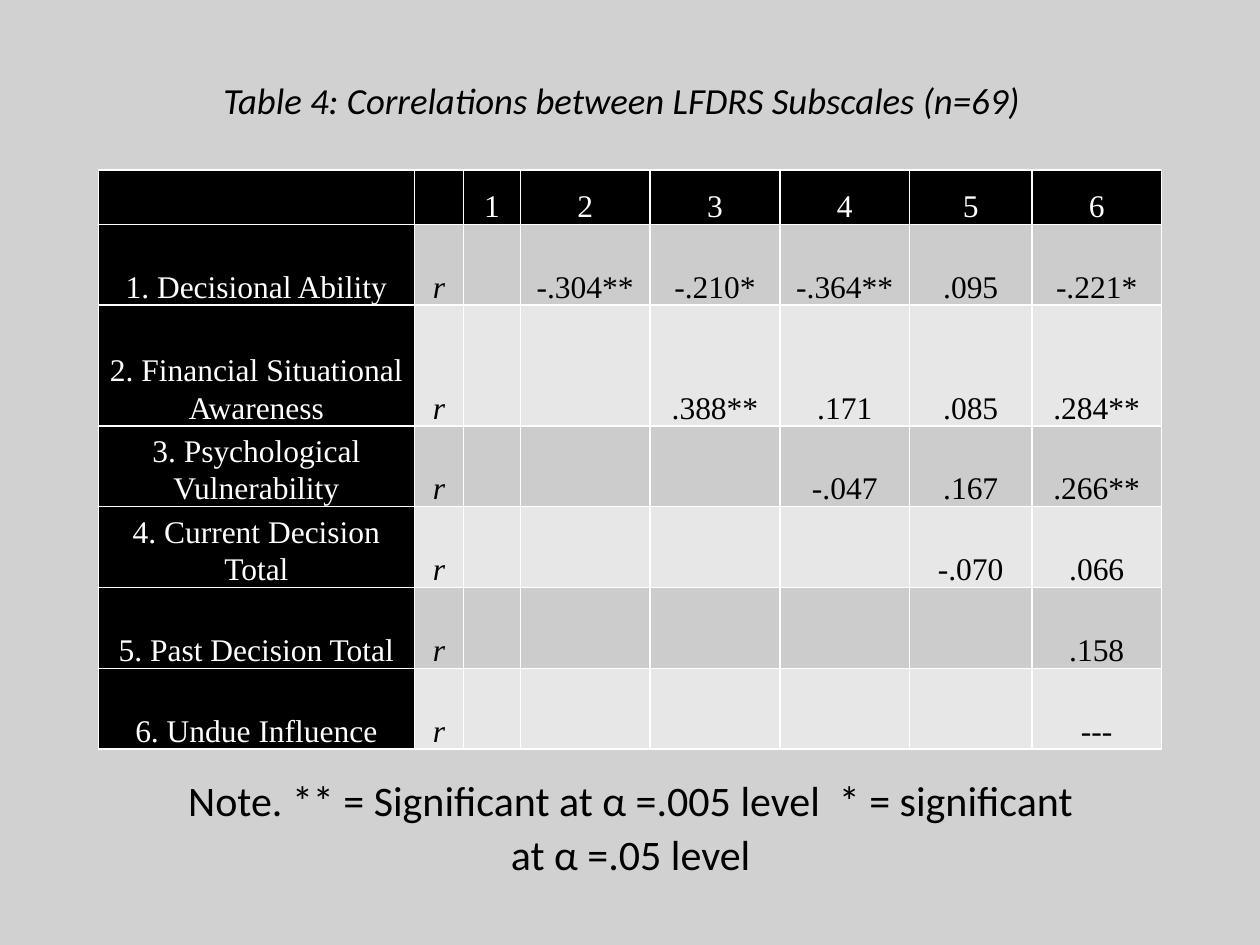
from lxml import etree
from pptx import Presentation, util as u
from pptx.dml.color import RGBColor
from pptx.enum import text
from pptx.oxml.ns import qn

TITLE = "Table 4: Correlations between LFDRS Subscales (n=69)"
NOTE = "Note. ** = Significant at α =.005 level  * = significant at α =.05 level"
HEAD = ["", "", "1", "2", "3", "4", "5", "6"]
# Each subscale with its correlations, aligned to the right-hand columns
SCALES = [
    ("1. Decisional Ability", ["-.304**", "-.210*", "-.364**", ".095", "-.221*"]),
    ("2. Financial Situational Awareness", [".388**", ".171", ".085", ".284**"]),
    ("3. Psychological Vulnerability", ["-.047", ".167", ".266**"]),
    ("4. Current Decision Total", ["-.070", ".066"]),
    ("5. Past Decision Total", [".158"]),
    ("6. Undue Influence", ["---"]),
]
COLS = [2.51, 0.39, 0.45, 1.03, 1.03, 1.03, 0.97, 1.03]
ROWS = [0.43, 0.64, 0.96, 0.64, 0.64, 0.64, 0.64]
THEME = {
    "back": "D1D1D1", "ink": "000000", "paper": "FFFFFF",
    "bands": ["CCCCCC", "E7E7E7"],
    "sans": "Calibri", "serif": "Times New Roman",
    "title": 21, "body": 18, "note": 24, "rule": 1, "lead": 1.07,
}


def paint(fill, color):
    fill.solid()
    fill.fore_color.rgb = RGBColor.from_string(color)


def style(frame, face, size, color, slant=False, lead=None):
    for para in frame.paragraphs:
        para.alignment = text.PP_ALIGN.CENTER
        para.line_spacing = lead
        for font in [para.font] + [run.font for run in para.runs]:
            font.name, font.size, font.italic = face, u.Pt(size), slant
            font.color.rgb = RGBColor.from_string(color)


def add_text(slide, box, words, wrap, size, **look):
    frame = slide.shapes.add_textbox(*map(u.Inches, box)).text_frame
    frame.text = words
    frame.word_wrap = wrap
    frame.auto_size = text.MSO_AUTO_SIZE.SHAPE_TO_FIT_TEXT
    style(frame, THEME["sans"], size, THEME["ink"], **look)
    return frame


def rule(cell):
    """Draw the four borders of a cell, ahead of its fill in the XML."""
    props = cell._tc.get_or_add_tcPr()
    for pos, side in enumerate(("lnL", "lnR", "lnT", "lnB")):
        line = etree.Element(qn("a:" + side), w=str(u.Pt(THEME["rule"])))
        fill = etree.SubElement(line, qn("a:solidFill"))
        etree.SubElement(fill, qn("a:srgbClr"), val=THEME["paper"])
        props.insert(pos, line)


def add_grid(slide):
    gaps = len(HEAD) - 2
    data = [HEAD] + [[name, "r"] + [""] * (gaps - len(vals)) + vals
                     for name, vals in SCALES]
    box = (0.78, 1.35, sum(COLS), sum(ROWS))
    grid = slide.shapes.add_table(len(ROWS), len(COLS), *map(u.Inches, box)).table
    for col, wide in zip(grid.columns, COLS):
        col.width = u.Inches(wide)
    for r, (row, high) in enumerate(zip(grid.rows, ROWS)):
        row.height = u.Inches(high)
        for c, cell in enumerate(row.cells):
            dark = r == 0 or c == 0
            cell.text_frame.text = data[r][c]
            cell.margin_left = cell.margin_right = u.Inches(0.06)
            cell.margin_top = cell.margin_bottom = 0
            cell.vertical_anchor = text.MSO_ANCHOR.BOTTOM
            paint(cell.fill, THEME["ink"] if dark else THEME["bands"][(r - 1) % 2])
            rule(cell)
            style(cell.text_frame, THEME["serif"], THEME["body"],
                  THEME["paper" if dark else "ink"],
                  slant=c == 1 and r > 0, lead=THEME["lead"])


def main():
    deck = Presentation()
    deck.slide_width, deck.slide_height = u.Inches(10), u.Inches(7.5)
    slide = deck.slides.add_slide(deck.slide_layouts[6])
    paint(slide.background.fill, THEME["back"])
    title = add_text(slide, (1.67, 0.58, 6.53, 0.43), TITLE, False,
                     THEME["title"], slant=True)
    title.vertical_anchor = text.MSO_ANCHOR.MIDDLE
    title.margin_left = title.margin_right = u.Inches(0.07)
    title.margin_top = title.margin_bottom = u.Inches(0.04)
    add_grid(slide)
    add_text(slide, (1.32, 6.07, 7.37, 0.43), NOTE, True,
             THEME["note"], lead=THEME["lead"])
    deck.save("out.pptx")


if __name__ == "__main__":
    main()
